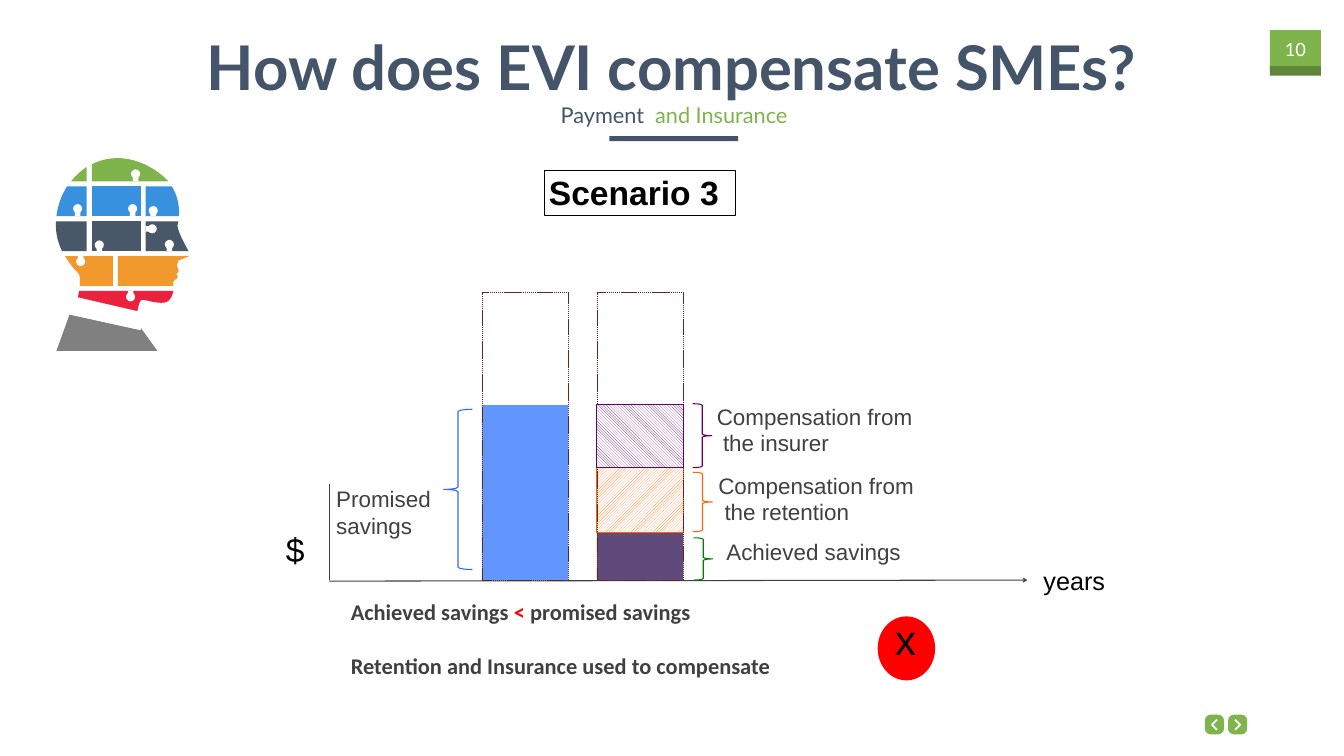
from lxml import etree
from pptx import Presentation
from pptx.dml.color import RGBColor
from pptx.enum.dml import MSO_LINE, MSO_PATTERN
from pptx.enum.shapes import MSO_CONNECTOR, MSO_SHAPE
from pptx.enum.text import MSO_AUTO_SIZE, PP_ALIGN
from pptx.oxml.ns import qn
from pptx.util import Cm, Pt

RECT, OVAL, ROUND = MSO_SHAPE.RECTANGLE, MSO_SHAPE.OVAL, MSO_SHAPE.ROUNDED_RECTANGLE
BRACE, STRAIGHT = MSO_SHAPE.RIGHT_BRACE, MSO_CONNECTOR.STRAIGHT
UP_DIAG, DOWN_DIAG = MSO_PATTERN.WIDE_UPWARD_DIAGONAL, MSO_PATTERN.WIDE_DOWNWARD_DIAGONAL
DASH, CENTER, LEFT = MSO_LINE.SQUARE_DOT, PP_ALIGN.CENTER, PP_ALIGN.LEFT
FIT, NO_FIT = MSO_AUTO_SIZE.SHAPE_TO_FIT_TEXT, MSO_AUTO_SIZE.NONE

COLOURS = {
    "white": "FFFFFF", "black": "000000", "red": "FF0000", "text": "404040",
    "navy": "445469", "green": "7FB34C", "dark green": "5F8639",
    "head red": "EB223D", "head orange": "F1992D", "head blue": "3891DE",
    "head slate": "485868", "neck": "808080",
    "promised": "6296FF", "achieved": "604A7B", "outline": "632523",
    "retention": "FF6600", "insurer": "660066",
    "promised brace": "3366FF", "achieved brace": "008000",
}


def inch(v):
    return Cm(v * 2.54)


def rgb(name):
    return RGBColor.from_string(COLOURS[name])


def bezier(p0, curve, steps=10):
    """Points on a cubic curve from p0; curve holds two controls and the end."""
    pts = [p0, curve[:2], curve[2:4], curve[4:]]
    for i in range(1, steps + 1):
        t = i / steps
        weights = (1 - t) ** 3, 3 * t * (1 - t) ** 2, 3 * t * t * (1 - t), t ** 3
        yield tuple(sum(w * p[k] for w, p in zip(weights, pts)) for k in (0, 1))


class Canvas:
    """Draws on one slide; positions are in inches."""

    def __init__(self, slide):
        self.shapes = slide.shapes

    def style(self, s, fill=None, line=None, width=1.5, dash=None, pattern=None):
        s.shadow.inherit = False
        if pattern:
            s.fill.patterned()
            s.fill.pattern = pattern
            s.fill.fore_color.rgb, s.fill.back_color.rgb = rgb(fill), rgb("white")
        elif fill:
            s.fill.solid()
            s.fill.fore_color.rgb = rgb(fill)
        else:
            s.fill.background()
        if line:
            s.line.color.rgb, s.line.width = rgb(line), Pt(width)
            if dash:
                s.line.dash_style = dash
        else:
            s.line.fill.background()
        return s

    def shape(self, kind, box, fill=None, **look):
        s = self.shapes.add_shape(kind, *map(inch, box))
        return self.style(s, fill, **look)

    def outline(self, path_points, fill=None, close=True, **look):
        pts = [path_points[0]]
        for p in path_points[1:]:
            pts.extend([p] if len(p) == 2 else bezier(pts[-1], p))
        pts = [(inch(x), inch(y)) for x, y in pts]
        fb = self.shapes.build_freeform(*pts[0])
        fb.add_line_segments(pts[1:], close=close)
        return self.style(fb.convert_to_shape(), fill, **look)

    def line(self, start, end, arrow=False):
        c = self.shapes.add_connector(STRAIGHT, *map(inch, start + end))
        c.line.color.rgb, c.line.width = rgb("text"), Pt(1.5)
        if arrow:
            etree.SubElement(c.line._get_or_add_ln(), qn("a:tailEnd"), type="arrow")
        etree.SubElement(c._element.spPr, qn("a:effectLst"))

    def text(self, box, paragraphs, size, font="Arial", colour="text", bold=False,
             align=LEFT, wrap=False, insets=(0.1, 0.05), fit=FIT, spacing=None, gap=0):
        """Each paragraph is a list of (text, colour) runs or a plain string."""
        s = self.shapes.add_textbox(*map(inch, box))
        tf = s.text_frame
        dx, dy = map(inch, insets)
        frame = {"word_wrap": wrap, "auto_size": fit, "margin_left": dx,
                 "margin_right": dx, "margin_top": dy, "margin_bottom": dy}
        for name, value in frame.items():
            setattr(tf, name, value)
        for i, runs in enumerate(paragraphs):
            p = tf.add_paragraph() if i else tf.paragraphs[0]
            p.alignment = align
            if spacing:
                p.line_spacing = spacing
            if i and gap:
                p.space_before = Pt(gap)
            for words, tint in [(runs, colour)] if isinstance(runs, str) else runs:
                r = p.add_run()
                r.text = words
                for name, value in {"size": Pt(size), "name": font, "bold": bold}.items():
                    setattr(r.font, name, value)
                r.font.color.rgb = rgb(tint)
        return s


def box_path(left, top, right, bottom):
    return [(left, top), (right, top), (right, bottom), (left, bottom)]


# Puzzle pieces of the head: 2-tuples are corners, 6-tuples are curves
PIECES = [
    ("head red", [(1.57, 5.77), (3.44, 5.77), (3.43, 5.82, 3.41, 5.89, 3.36, 5.95),
                  (3.25, 6.09, 2.87, 5.93, 2.81, 5.95), (2.75, 5.97, 2.71, 6.26, 2.71, 6.26),
                  (1.53, 5.99)]),
    ("head orange", [(1.29, 5.08), (2.24, 5.08), (2.24, 5.67), (1.58, 5.67),
                     (1.59, 5.56, 1.59, 5.46, 1.55, 5.42), (1.44, 5.31, 1.35, 5.19, 1.29, 5.08)]),
    ("head orange", [(2.34, 5.08), (3.76, 5.08), (3.54, 5.17), (3.51, 5.27),
                     (3.51, 5.27, 3.53, 5.33, 3.54, 5.35), (3.56, 5.4, 3.49, 5.44, 3.49, 5.44),
                     (3.49, 5.44, 3.54, 5.46, 3.52, 5.51), (3.5, 5.54, 3.44, 5.58, 3.44, 5.58),
                     (3.44, 5.67), (2.34, 5.67)]),
    ("green", [(1.82, 3.6), (1.82, 3.26), (2.1, 3.12, 2.46, 3.07, 2.89, 3.27),
               (3.09, 3.37, 3.23, 3.48, 3.34, 3.6)]),
    ("green", [(1.72, 3.6), (1.72, 3.31), (1.6, 3.4, 1.49, 3.49, 1.41, 3.6)]),
    ("neck", [(1.12, 6.96), (1.38, 6.24), (2.79, 6.55), (2.79, 6.5), (3.12, 6.96)]),
    ("white", [(2.79, 6.55), (1.38, 6.24), (1.5, 5.89), (2.79, 6.19)]),
    ("head slate", box_path(1.82, 4.39, 2.79, 4.98)),
    ("head slate", [(1.72, 4.39), (1.11, 4.39), (1.1, 4.58, 1.13, 4.77, 1.23, 4.98), (1.72, 4.98)]),
    ("head slate", [(2.89, 4.39), (3.54, 4.39), (3.53, 4.45, 3.52, 4.46, 3.52, 4.48),
                    (3.53, 4.62, 3.74, 4.98, 3.74, 4.98), (2.89, 4.98)]),
    ("head blue", [(2.89, 3.7), (3.41, 3.7), (3.54, 3.91, 3.56, 4.14, 3.55, 4.29), (2.89, 4.29)]),
    ("head blue", box_path(1.82, 3.7, 2.79, 4.29)),
    ("head blue", [(1.72, 3.7), (1.33, 3.7), (1.3, 3.74, 1.28, 3.79, 1.25, 3.84),
                   (1.19, 3.97, 1.14, 4.12, 1.12, 4.29), (1.72, 4.29)]),
]
# Sockets: centre of the round part and size of the neck that leads to the edge
SOCKETS = [(2.59, 5.89, 0, -0.12), (1.6, 5.19, 0, -0.11), (2.69, 3.45, 0, 0.15),
           (1.97, 4.86, 0, 0.12), (3.36, 4.85, 0, 0.13), (3.02, 4.54, -0.13, 0),
           (3.04, 4.18, 0, 0.11), (2.63, 4.14, 0, 0.15), (1.54, 4.14, 0, 0.15)]


def main():
    prs = Presentation()
    prs.slide_width, prs.slide_height = inch(26.66), inch(15)
    c = Canvas(prs.slides.add_slide(prs.slide_layouts[6]))

    # Page number badge
    c.shape(RECT, (25.19, 0.6, 1.01, 0.8), "green")
    c.shape(RECT, (25.19, 1.31, 1.01, 0.19), "dark green")
    c.text((25.27, 0.66, 0.85, 0.64), ["10"], 26, "Lato", "white", align=CENTER, insets=(0.2, 0.1))

    # Previous and next buttons
    for left, side in ((23.9, -1), (24.36, 1)):
        s = c.shape(ROUND, (left, 14.18, 0.38, 0.39), "green")
        s.adjustments[0] = 0.3
        mid = left + 0.19
        c.outline([(mid - side * 0.05, 14.28), (mid + side * 0.05, 14.38),
                   (mid - side * 0.05, 14.48)], close=False, line="white", width=2.5)

    # Puzzle head
    for colour, points in PIECES:
        c.outline(points, colour)
    for x, y, dx, dy in SOCKETS:
        c.shape(OVAL, (x - 0.09, y - 0.09, 0.18, 0.18), "white")
        w, h = abs(dx) or 0.11, abs(dy) or 0.11
        c.shape(RECT, (x + dx / 2 - w / 2, y + dy / 2 - h / 2, w, h), "white")

    # Title, subtitle and rule
    c.text((3.17, 0.53, 20.31, 3.06), ["How does EVI compensate SMEs?"], 88, "Lato", "navy",
           bold=True, align=CENTER, wrap=True)
    c.shape(RECT, (12.09, 2.7, 2.55, 0.1), "navy")
    c.text((3.79, 1.79, 19.16, 0.92), [[("Payment  ", "navy"), ("and Insurance", "green")]],
           31, "Lato", align=CENTER, wrap=True, insets=(0.24, 0.12), fit=NO_FIT, spacing=1.2)

    # Axes
    c.line((6.53, 11.51), (6.53, 9.61))
    c.line((6.53, 11.53), (20.38, 11.51), arrow=True)
    c.text((5.57, 10.45, 0.58, 0.91), ["$"], 48, colour="black")
    c.text((20.6, 11.16, 1.44, 0.71), ["years"], 36, colour="black")

    # Bars: promised on the left, achieved plus compensation on the right
    left, right, width, base = 9.56, 11.84, 1.71, 11.51
    c.shape(RECT, (left, 8.04, width, base - 8.04), "promised")
    c.shape(RECT, (right, 10.55, width, base - 10.55), "achieved")
    c.shape(RECT, (right, 8.92, width, 1.64), "retention", line="retention", pattern=UP_DIAG)
    for x in (left, right):
        c.shape(RECT, (x, 5.8, width, base - 5.8), line="outline", width=0.75, dash=DASH)
    c.shape(RECT, (right, 8.02, width, 1.26), "insurer", line="insurer", pattern=DOWN_DIAG)

    # Braces and their labels
    for brace, colour, label, lines in (
        ((13.74, 8.01, 0.38, 1.27), "insurer", (14.12, 7.94, 4.11, 1.18),
         ["Compensation from", " the insurer"]),
        ((13.74, 9.37, 0.39, 1.18), "retention", (14.15, 9.31, 4.11, 1.18),
         ["Compensation from", " the retention"]),
        ((13.76, 10.67, 0.38, 0.84), "achieved brace", (14.31, 10.63, 3.82, 0.64),
         ["Achieved savings"]),
    ):
        c.shape(BRACE, brace, line=colour)
        c.text(label, lines, 32)
    c.shape(BRACE, (8.8, 8.12, 0.57, 3.18), line="promised brace").rotation = 180
    c.text((6.57, 9.58, 2.43, 1.18), ["Promised savings"], 32, wrap=True)

    # Scenario heading
    s = c.text((10.79, 3.37, 3.8, 0.91), ["Scenario 3"], 48, colour="black", bold=True, wrap=True)
    s.line.color.rgb, s.line.width = rgb("black"), Pt(0.75)

    # Conclusion and mark
    c.text((6.86, 11.82, 9.86, 2.26),
           [[("Achieved savings ", "text"), ("< ", "red"), ("promised savings", "text")],
            "Retention and Insurance used to compensate"],
           32, "Calibri", bold=True, wrap=True, gap=39)
    c.shape(OVAL, (17.41, 12.23, 1.14, 1.27), "red")
    c.text((17.66, 12.13, 0.62, 1.11), ["x"], 60, colour="black")

    prs.save("out.pptx")


if __name__ == "__main__":
    main()
